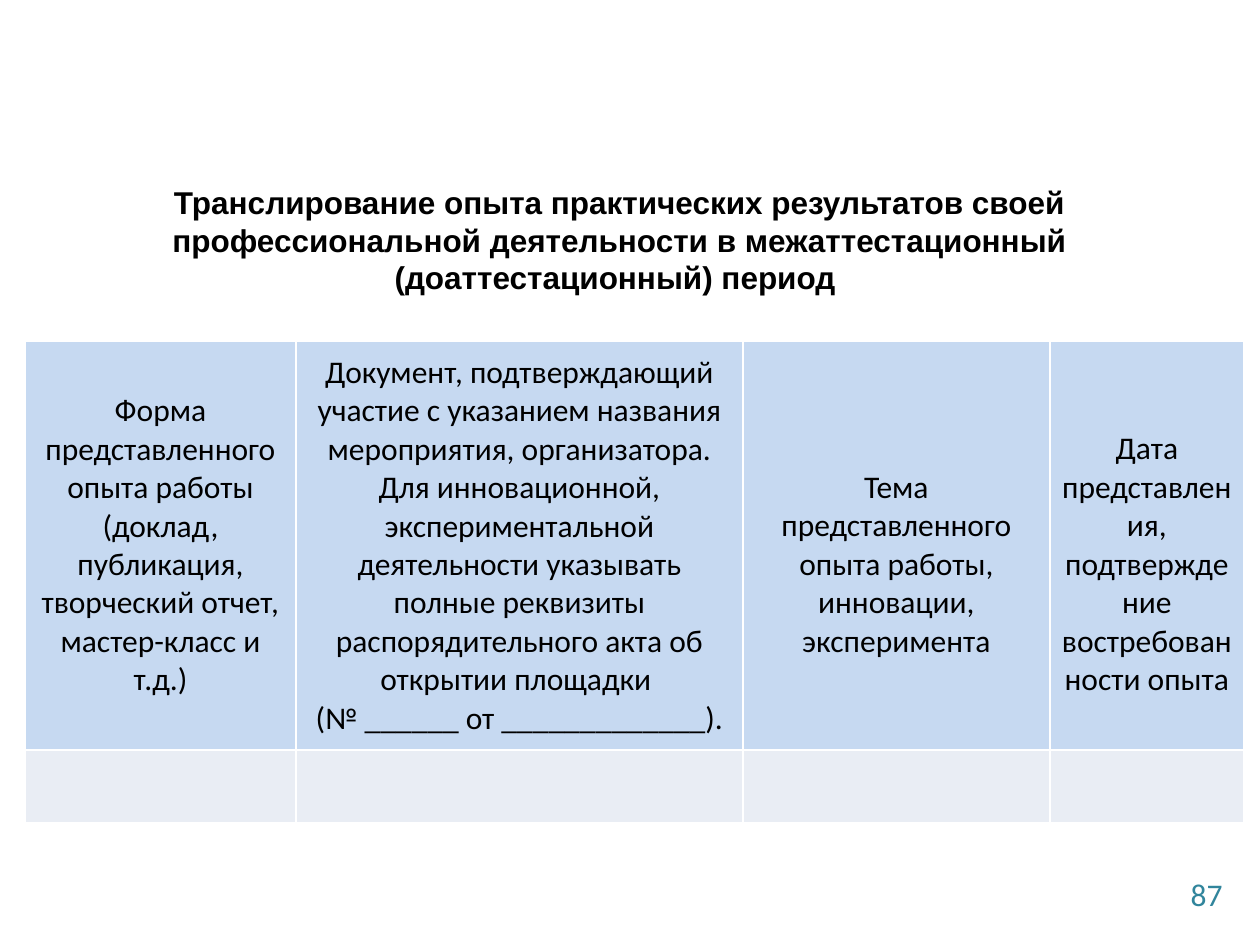
from pptx import Presentation
from pptx.dml.color import RGBColor
from pptx.enum.text import MSO_ANCHOR as Anchor, PP_ALIGN as Align
from pptx.oxml import parse_xml
from pptx.oxml.ns import nsdecls
from pptx.util import Pt

PX = 914400 // 126
LINE = 38  # height of one line of table text

HEADERS = [
    ["Форма представленного опыта работы (доклад, публикация, творческий отчет, "
     "мастер-класс и т.д.)"],
    ["Документ, подтверждающий участие с указанием названия мероприятия, организатора.",
     "Для инновационной, экспериментальной деятельности указывать полные реквизиты "
     "распорядительного акта об открытии площадки ",
     "(№ ______ от _____________)."],
    ["Тема представленного опыта работы, инновации, эксперимента"],
    ["Дата представления, подтверждение востребованности опыта"],
]
TOP_MARGINS = [0, 0, LINE, LINE]
COL_WIDTHS = [271, 447, 307, 194]
ROW_HEIGHTS = [409, 73]


def rgb(color):
    return RGBColor.from_string(color)


class SlideBuilder:
    size = Pt(18)
    border = "FFFFFF"
    header_fill = "C6D9F1"
    body_fill = "E9EDF4"

    def __init__(self, prs):
        self.s = prs.slides.add_slide(prs.slide_layouts[6])

    def fill_text(self, tf, lines, align, font="Calibri", color="000000", bold=False):
        tf.word_wrap = True
        for i, line in enumerate(lines):
            p = tf.paragraphs[0] if i == 0 else tf.add_paragraph()
            p.text = line
            p.alignment = align
            p.font.size = self.size
            p.font.name = font
            p.font.bold = bold
            p.font.color.rgb = rgb(color)

    def text(self, box, line, align, bottom=6, **style):
        tf = self.s.shapes.add_textbox(*(v * PX for v in box)).text_frame
        tf.vertical_anchor = Anchor.MIDDLE
        tf.margin_bottom = bottom * PX
        self.fill_text(tf, [line], align, **style)

    def outline(self, cell):
        """Draw a thin line on all four sides of a cell."""
        pr = cell._tc.get_or_add_tcPr()
        for i, side in enumerate(("lnL", "lnR", "lnT", "lnB")):
            pr.insert(i, parse_xml(
                f'<a:{side} {nsdecls("a")} w="12700"><a:solidFill>'
                f'<a:srgbClr val="{self.border}"/></a:solidFill></a:{side}>'))

    def table(self, left, top, headers, top_margins, widths, heights):
        tbl = self.s.shapes.add_table(
            len(heights), len(widths), left * PX, top * PX,
            sum(widths) * PX, sum(heights) * PX).table
        for col, width in zip(tbl.columns, widths):
            col.width = width * PX
        for row, height in zip(tbl.rows, heights):
            row.height = height * PX
        for cell in tbl.iter_cells():
            cell.fill.solid()
            cell.fill.fore_color.rgb = rgb(self.body_fill)
            self.outline(cell)
        for cell, lines, margin in zip(tbl.rows[0].cells, headers, top_margins):
            cell.fill.fore_color.rgb = rgb(self.header_fill)
            cell.vertical_anchor = Anchor.MIDDLE
            cell.margin_left = cell.margin_right = 9 * PX
            cell.margin_top, cell.margin_bottom = margin * PX, 0
            self.fill_text(cell.text_frame, lines, Align.CENTER)


def main():
    prs = Presentation()
    prs.slide_width, prs.slide_height = 1260 * PX, 945 * PX
    slide = SlideBuilder(prs)
    slide.text((941, 869, 294, 50), "87", Align.RIGHT, color="31859C")
    slide.table(25, 341, HEADERS, TOP_MARGINS, COL_WIDTHS, ROW_HEIGHTS)
    slide.text((54, 175, 1131, 165),
               "Транслирование опыта практических результатов своей профессиональной "
               "деятельности в межаттестационный (доаттестационный) период ",
               Align.CENTER, bottom=42, font="Arial", bold=True)
    prs.save("out.pptx")


if __name__ == "__main__":
    main()
